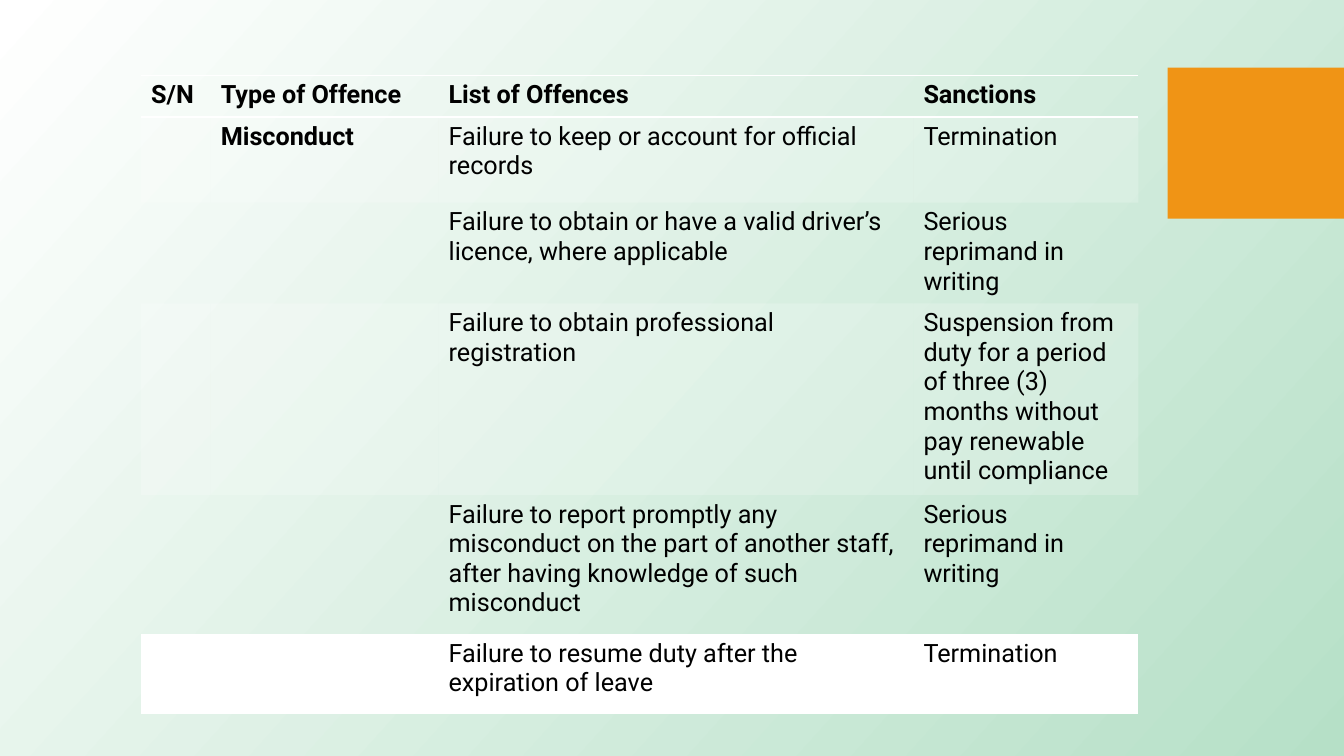
import lxml.etree
import pptx
import pptx.dml.color
import pptx.enum.shapes
import pptx.oxml.ns
import pptx.util

Inches = pptx.util.Inches
RGBColor = pptx.dml.color.RGBColor
qn = pptx.oxml.ns.qn

WHITE = RGBColor(0xFF, 0xFF, 0xFF)
BLACK = RGBColor(0, 0, 0)
GREEN = RGBColor(0xB6, 0xE0, 0xC7)
ORANGE = RGBColor(0xF0, 0x94, 0x15)
FONT = "Roboto"
NO_STYLE_NO_GRID = "{2D5ABB26-0587-4C30-8999-92F81FD0307C}"

COLUMN_WIDTHS = [0.69, 2.26, 4.71, 2.23]
ROW_HEIGHTS = [0.41, 0.85, 1.0, 1.9, 1.38, 0.79]
ROWS = [
    ["S/N", "Type of Offence", "List of Offences", "Sanctions"],
    ["", "Misconduct", "Failure to keep or account for official records", "Termination"],
    ["", "", "Failure to obtain or have a valid driver’s licence, where applicable",
     "Serious reprimand in writing"],
    ["", "", "Failure to obtain professional registration",
     "Suspension from duty for a period of three (3) months without pay "
     "renewable until compliance"],
    ["", "", "Failure to report promptly any misconduct on the part of another staff, "
     "after having knowledge of such misconduct", "Serious reprimand in writing"],
    ["", "", "Failure to resume duty after the expiration of leave", "Termination"],
]


def set_background(s):
    fill = s.background.fill
    fill.gradient()
    fill.gradient_angle = 360 - 42
    for stop, color in zip(fill.gradient_stops, (WHITE, GREEN)):
        stop.color.rgb = color


def add_block(s, left, top, width, height):
    block = s.shapes.add_shape(
        pptx.enum.shapes.MSO_SHAPE.RECTANGLE,
        Inches(left), Inches(top), Inches(width), Inches(height))
    block.shadow.inherit = False
    block.fill.solid()
    block.fill.fore_color.rgb = ORANGE
    block.line.fill.background()


def add_border(cell, tag):
    """Draw a 1 pt white line on one side; call before filling the cell."""
    tcPr = cell._tc.get_or_add_tcPr()
    ln = lxml.etree.SubElement(tcPr, qn(tag), w=str(pptx.util.Pt(1)))
    solid = lxml.etree.SubElement(ln, qn("a:solidFill"))
    lxml.etree.SubElement(solid, qn("a:srgbClr"), val=str(WHITE))


def fill_cell(cell, banded):
    """Give a banded cell a 20 % white veil and leave others clear."""
    if not banded:
        cell.fill.background()
        return
    cell.fill.solid()
    cell.fill.fore_color.rgb = WHITE
    color = cell._tc.tcPr.find(".//" + qn("a:srgbClr"))
    lxml.etree.SubElement(color, qn("a:alpha"), val="20000")


def write_cell(cell, text, bold):
    cell.text_frame.text = text
    p = cell.text_frame.paragraphs[0]
    for font in [p.font] + [r.font for r in p.runs]:
        font.name = FONT
        font.size = pptx.util.Pt(18)
        font.bold = bold
        font.color.rgb = BLACK


def add_offence_table(s, left, top):
    frame = s.shapes.add_table(
        len(ROWS), len(COLUMN_WIDTHS), Inches(left), Inches(top),
        Inches(sum(COLUMN_WIDTHS)), Inches(sum(ROW_HEIGHTS)))
    table = frame.table
    table.horz_banding = False
    table._tbl.tblPr.find(qn("a:tableStyleId")).text = NO_STYLE_NO_GRID
    for column, width in zip(table.columns, COLUMN_WIDTHS):
        column.width = Inches(width)
    last = len(ROWS) - 1
    for i, (texts, height) in enumerate(zip(ROWS, ROW_HEIGHTS)):
        table.rows[i].height = Inches(height)
        for j, text in enumerate(texts):
            cell = table.cell(i, j)
            write_cell(cell, text, bold=i == 0 or j == 1)
            if i == 0:
                add_border(cell, "a:lnT")
            if i in (0, last):
                add_border(cell, "a:lnB")
            fill_cell(cell, banded=i % 2 == 1)


def main():
    prs = pptx.Presentation()
    prs.slide_width = Inches(13.33)
    prs.slide_height = Inches(7.5)
    s = prs.slides.add_slide(prs.slide_layouts[6])
    set_background(s)
    add_block(s, 11.58, 0.67, 1.75, 1.5)
    add_offence_table(s, 1.4, 0.75)
    prs.save("out.pptx")


if __name__ == "__main__":
    main()
